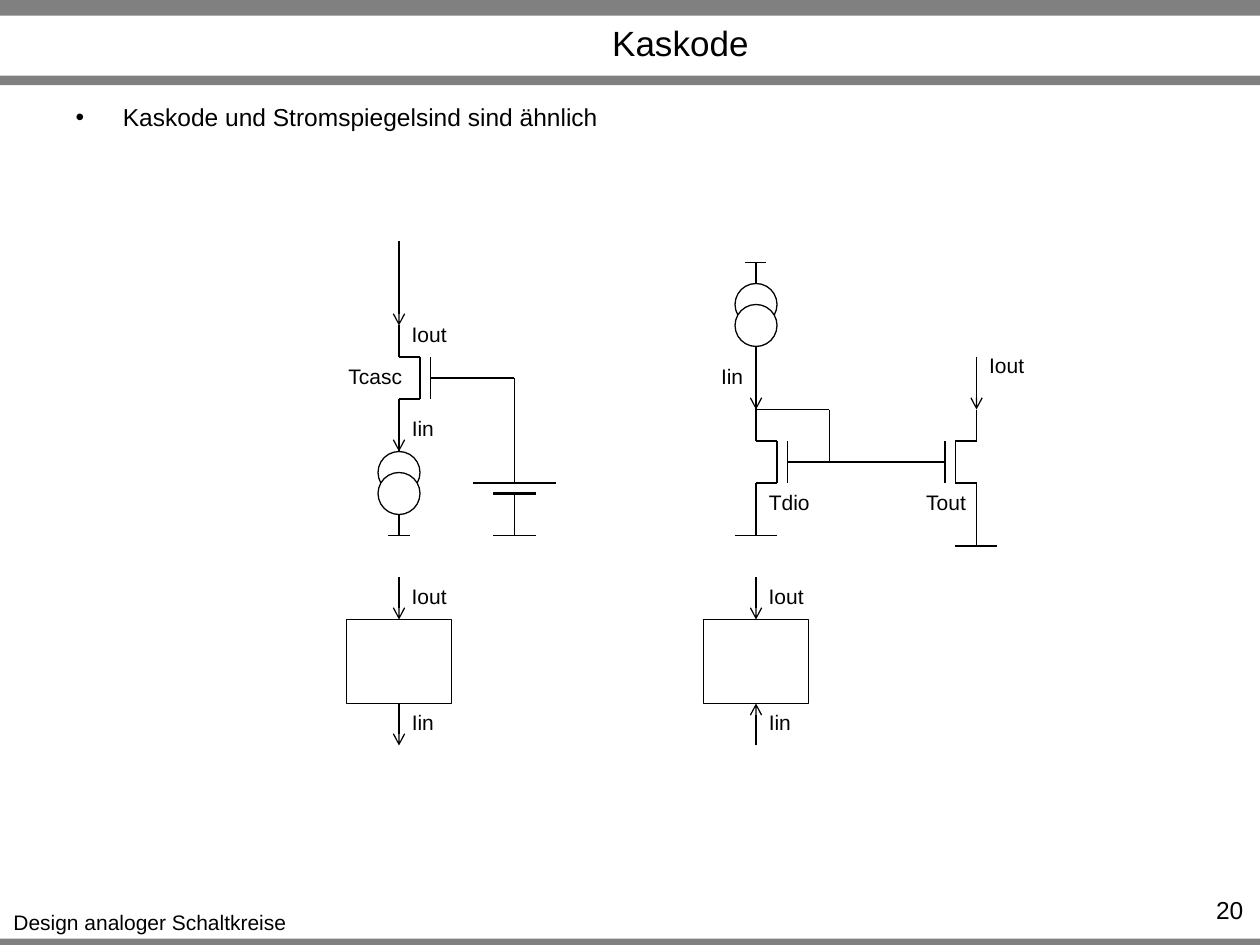
from typing import NamedTuple

from lxml.etree import SubElement
from pptx import Presentation
from pptx.dml.color import RGBColor
from pptx.enum.shapes import MSO_CONNECTOR as Connector, MSO_SHAPE as Shape
from pptx.enum.text import MSO_ANCHOR as Anchor, MSO_AUTO_SIZE as AutoSize, PP_ALIGN as Align
from pptx.oxml.ns import qn
from pptx.util import Pt

COLORS = {"black": "000000", "white": "FFFFFF", "bar": "808080"}
FONT = "Arial"
LINE_WIDTH = 0.75
CASCODE_X, DIODE_X, OUTPUT_X, BATTERY_X = 228, 432, 558, 294


class Wire(NamedTuple):
    x1: float
    y1: float
    x2: float
    y2: float
    arrow: bool = False
    width: float = LINE_WIDTH


class Label(NamedTuple):
    text: str
    left: float
    top: float
    width: float


class Transistor(NamedTuple):
    x: float
    y: float
    gate_side: int  # 1 = gate on the right, -1 = gate on the left


class CurrentSource(NamedTuple):
    x: float
    top: float


class BlackBox(NamedTuple):
    x: float
    input_flows_in: bool


def color(name: str) -> RGBColor:
    return RGBColor.from_string(COLORS[name])


def place(shape, left: float, top: float, width: float, height: float) -> None:
    shape.left, shape.top = Pt(left), Pt(top)
    shape.width, shape.height = Pt(width), Pt(height)


def write_text(shape, text: str, *, size: float = 12, align=Align.LEFT,
               anchor=Anchor.TOP, wrap: bool = True, bullet_indent: float = 0) -> None:
    frame = shape.text_frame
    frame.word_wrap = wrap
    frame.auto_size = AutoSize.NONE if wrap else AutoSize.SHAPE_TO_FIT_TEXT
    frame.vertical_anchor = anchor
    frame.text = text
    paragraph = frame.paragraphs[0]
    paragraph.alignment = align
    paragraph.space_before = Pt(0)
    if bullet_indent:
        properties = paragraph._p.get_or_add_pPr()
        properties.set("marL", str(Pt(bullet_indent)))
        properties.set("indent", str(-Pt(bullet_indent)))
        SubElement(properties, qn("a:buChar"), char="•")
    font = paragraph.runs[0].font
    font.name, font.size = FONT, Pt(size)
    font.color.rgb = color("black")


def add_text(shapes, text: str, left: float, top: float, width: float, height: float, **style) -> None:
    box = shapes.add_textbox(Pt(left), Pt(top), Pt(width), Pt(height))
    write_text(box, text, **style)
    place(box, left, top, width, height)


def add_block(shapes, kind, left: float, top: float, width: float, height: float,
              fill: str = "", outline: bool = True):
    shape = shapes.add_shape(kind, Pt(left), Pt(top), Pt(width), Pt(height))
    shape.shadow.inherit = False
    if fill:
        shape.fill.solid()
        shape.fill.fore_color.rgb = color(fill)
    else:
        shape.fill.background()
    if outline:
        shape.line.color.rgb = color("black")
        shape.line.width = Pt(LINE_WIDTH)
    else:
        shape.line.fill.background()
    return shape


def add_wire(shapes, wire: Wire):
    connector = shapes.add_connector(
        Connector.STRAIGHT, Pt(wire.x1), Pt(wire.y1), Pt(wire.x2), Pt(wire.y2))
    connector.line.color.rgb = color("black")
    connector.line.width = Pt(wire.width)
    if wire.arrow:
        SubElement(connector.line._get_or_add_ln(), qn("a:tailEnd"), type="arrow")
    SubElement(connector._element.spPr, qn("a:effectLst"))
    return connector


def add_wire_group(slide, wires: list[Wire]) -> None:
    group = slide.shapes.add_group_shape()
    for wire in wires:
        add_wire(group.shapes, wire)


def add_transistor(slide, transistor: Transistor) -> None:
    x, y, side = transistor
    channel, gate, lead, end = (x + side * offset for offset in (12, 18, 30, 42))
    add_wire_group(slide, [
        Wire(x, y + 12, channel, y + 12),
        Wire(channel, y + 12, channel, y - 12),
        Wire(lead, y, gate, y),
        Wire(gate, y + 12, gate, y - 12),
        Wire(x, y - 12, channel, y - 12),
        Wire(x, y - 12, x, y - 30),
        Wire(x, y + 30, x, y + 12),
        Wire(lead, y, end, y),
    ])


def add_current_source(slide, source: CurrentSource) -> None:
    x, top = source
    shapes = slide.shapes.add_group_shape().shapes
    add_wire(shapes, Wire(x, top + 48, x, top + 60))
    for offset in (12, 24):
        add_block(shapes, Shape.OVAL, x - 12, top + offset, 24, 24, fill="white")
    add_wire(shapes, Wire(x, top, x, top + 12))


def add_battery(slide, x: float, top: float) -> None:
    add_wire_group(slide, [
        Wire(x, top, x, top + 18),
        Wire(x, top + 24, x, top + 48),
        Wire(x - 12, top + 48, x + 12, top + 48),
        Wire(x + 12, top + 24, x - 12, top + 24, width=2),
        Wire(x + 24, top + 18, x - 24, top + 18),
    ])


def add_black_box(slide, box: BlackBox) -> None:
    x = box.x
    block = add_block(slide.shapes, Shape.RECTANGLE, x - 30, 354, 60, 48)
    add_wire(slide.shapes, Wire(x, 330, x, 354, arrow=True)).end_connect(block, 0)
    if box.input_flows_in:
        add_wire(slide.shapes, Wire(x, 426, x, 402, arrow=True)).end_connect(block, 2)
    else:
        add_wire(slide.shapes, Wire(x, 402, x, 426, arrow=True)).begin_connect(block, 2)
    for label in (Label("Iout", x, 330, 34.5), Label("Iin", x, 402, 27.3)):
        add_label(slide, label)


def add_label(slide, label: Label) -> None:
    add_text(slide.shapes, label.text, label.left, label.top, label.width, 21.6,
             align=Align.CENTER, wrap=False)


WIRES = [
    # Cascode
    Wire(CASCODE_X, 138, CASCODE_X, 186, arrow=True),
    Wire(CASCODE_X, 228, CASCODE_X, 258, arrow=True),
    Wire(CASCODE_X - 6, 306, CASCODE_X + 6, 306),
    Wire(270, 216, BATTERY_X, 216),
    Wire(BATTERY_X, 264, BATTERY_X, 216),
    # Current mirror, diode side
    Wire(DIODE_X - 6, 150, DIODE_X + 6, 150),
    Wire(DIODE_X, 210, DIODE_X, 234, arrow=True),
    Wire(DIODE_X, 210, DIODE_X, 246),
    Wire(DIODE_X, 288, DIODE_X, 306),
    Wire(DIODE_X - 12, 306, DIODE_X + 12, 306),
    Wire(DIODE_X, 234, 474, 234),
    Wire(474, 234, 474, 264),
    # Current mirror, output side
    Wire(474, 264, 540, 264),
    Wire(OUTPUT_X, 204, OUTPUT_X, 234, arrow=True),
    Wire(OUTPUT_X, 294, OUTPUT_X, 312),
    Wire(OUTPUT_X - 12, 312, OUTPUT_X + 12, 312),
]
TRANSISTORS = [Transistor(CASCODE_X, 216, 1), Transistor(DIODE_X, 264, 1), Transistor(OUTPUT_X, 264, -1)]
SOURCES = [CurrentSource(CASCODE_X, 246), CurrentSource(DIODE_X, 150)]
BLACK_BOXES = [BlackBox(CASCODE_X, False), BlackBox(DIODE_X, True)]
LABELS = [
    Label("Iout", CASCODE_X, 180, 34.5), Label("Tcasc", 192, 204, 45),
    Label("Iin", CASCODE_X, 234, 27.3), Label("Iin", 404.7, 204, 27.3),
    Label("Tdio", DIODE_X, 276, 38), Label("Tout", 522, 276, 37.3),
    Label("Iout", OUTPUT_X, 198, 34.5),
]


def main() -> None:
    presentation = Presentation()
    presentation.slide_width, presentation.slide_height = Pt(720), Pt(540)
    slide = presentation.slides.add_slide(presentation.slide_layouts[1])

    # Frame, title and body
    for top, height in ((536.4, 5.4), (0, 9), (43.2, 5.4)):
        add_block(slide.shapes, Shape.RECTANGLE, 0, top, 720, height, fill="bar", outline=False)
    title, body = slide.placeholders
    place(title, 93.6, 10.2, 590.4, 27.6)
    write_text(title, "Kaskode", size=20, align=Align.CENTER, anchor=Anchor.MIDDLE)
    place(body, 36, 54.6, 648, 65.4)
    write_text(body, "Kaskode und Stromspiegelsind sind ähnlich", size=14, bullet_indent=27)
    add_text(slide.shapes, "Design analoger Schaltkreise", 0, 516.2, 171.4, 21.6,
             align=Align.CENTER, wrap=False)
    add_text(slide.shapes, "20", 655.2, 508.2, 62.4, 17.4, size=14, align=Align.RIGHT)

    # Circuits
    for wire in WIRES:
        add_wire(slide.shapes, wire)
    for transistor in TRANSISTORS:
        add_transistor(slide, transistor)
    for source in SOURCES:
        add_current_source(slide, source)
    add_battery(slide, BATTERY_X, 258)
    for label in LABELS:
        add_label(slide, label)

    # Equivalent boxes
    for box in BLACK_BOXES:
        add_black_box(slide, box)

    presentation.save("out.pptx")


if __name__ == "__main__":
    main()
